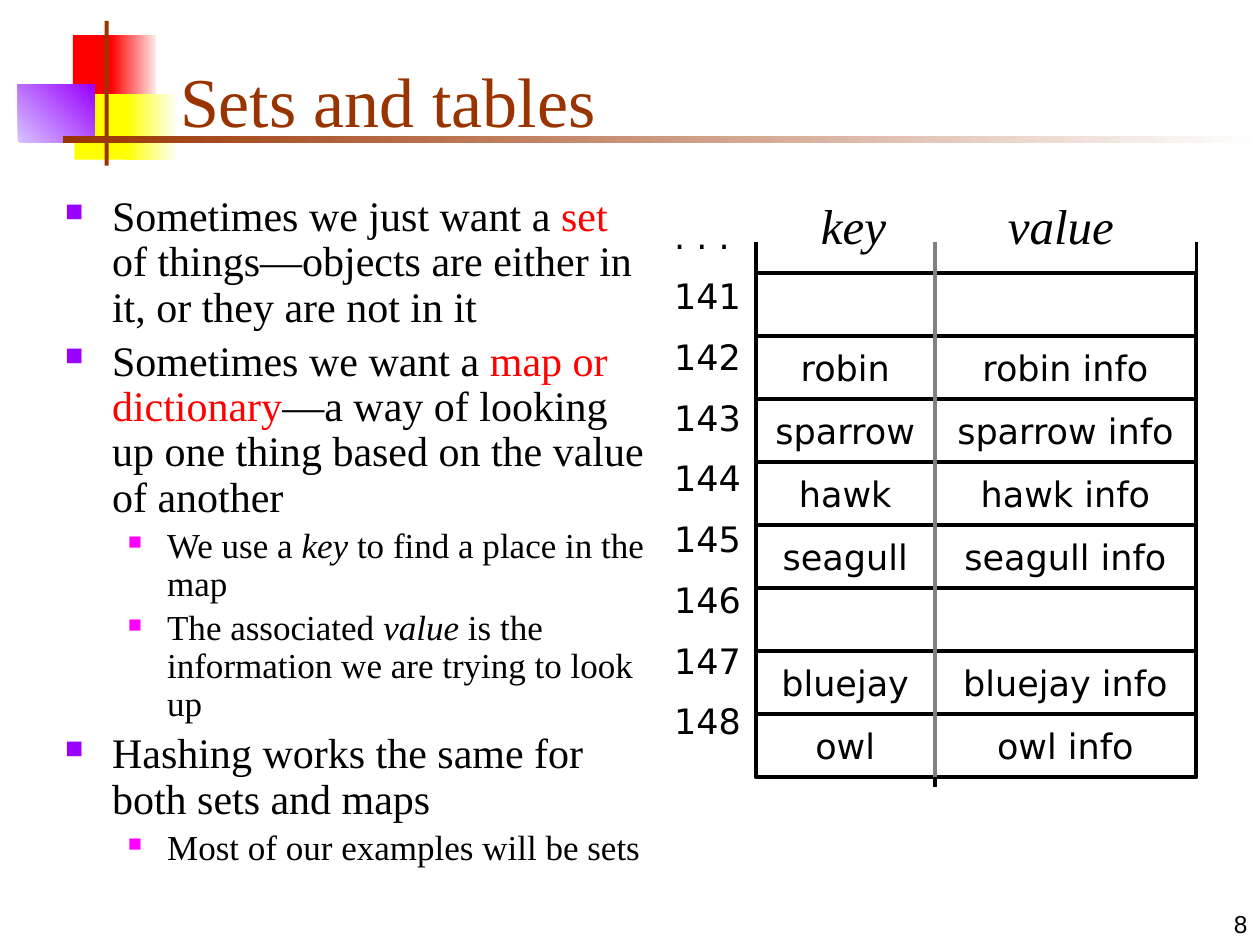
"""Build the slide on sets and tables."""
import pptx
import pptx.dml.color
import pptx.enum.shapes
import pptx.enum.text
import pptx.oxml.ns
import pptx.util
from lxml import etree

Cm = pptx.util.Cm
Pt = pptx.util.Pt
KIND = pptx.enum.shapes.MSO_SHAPE
ALIGN = pptx.enum.text.PP_ALIGN
ANCHOR = pptx.enum.text.MSO_ANCHOR
SERIF, SANS = "Times New Roman", "DejaVu Sans"
HUES = {
    "black": "000000", "white": "FFFFFF", "gray": "808080", "red": "FF0000",
    "rose": "FFEAEA", "yellow": "FFFF00", "cream": "FFFFF8", "lilac": "D8C4FF",
    "purple": "9900FF", "pink": "FF00FF", "brown": "993300",
}
BLOCKS = [
    (1.47, 0.71, 0.89, 1.32, ["red"], 0),
    (2.24, 0.71, 0.91, 1.32, ["red", "rose"], 0),
    (1.5, 1.9, 1.17, 1.32, ["yellow"], 0),
    (2.54, 1.9, 1.02, 1.32, ["yellow", "cream"], 0),
    (0.36, 1.7, 1.55, 1.17, ["lilac", "purple"], 45),
    (2.11, 0.42, 0.08, 2.92, ["brown"], 0),
    (1.27, 2.74, 24.13, 0.14, ["brown", "white"], 0),
]
POINTS = [
    (0, [("Sometimes we just want a ", ""), ("set", "red"),
         (" of things—objects are either in it, or they are not in it", "")]),
    (0, [("Sometimes we want a ", ""), ("map or dictionary", "red"),
         ("—a way of looking up one thing based on the value of another", "")]),
    (1, [("We use a ", ""), ("key", "italic"), (" to find a place in the map", "")]),
    (1, [("The associated ", ""), ("value", "italic"),
         (" is the information we are trying to look up", "")]),
    (0, [("Hashing works the same for both sets and maps", "")]),
    (1, [("Most of our examples will be sets", "")]),
]
LEVELS = [
    {"size": 24, "left": 0.95, "hang": 0.95, "gap": 4.9, "hue": "purple", "scale": 60},
    {"size": 20, "left": 2.06, "hang": 0.79, "gap": 4, "hue": "pink", "scale": 55},
]
BIRDS = ["", "robin", "sparrow", "hawk", "seagull", "", "bluejay", "owl"]
LEFT, SPLIT, RIGHT = 15.24, 18.84, 24.12
TOP, ROW, RISE = 5.51, 1.27, 4.88


def color(name):
    """Return the named colour."""
    return pptx.dml.color.RGBColor.from_string(HUES[name])


def add_run(para, text, size, font=SERIF, hue="black", italic=False):
    """Add one styled run to a paragraph."""
    run = para.add_run()
    run.text = text
    run.font.size, run.font.name, run.font.italic = Pt(size), font, italic
    run.font.color.rgb = color(hue)


def add_box(slide, x, y, w, h, anchor=ANCHOR.TOP):
    """Add a wrapping text box and return its frame."""
    frame = slide.shapes.add_textbox(Cm(x), Cm(y), Cm(w), Cm(h)).text_frame
    frame.word_wrap, frame.vertical_anchor = True, anchor
    return frame


def add_block(slide, x, y, w, h, hues, angle):
    """Add a borderless block with a plain or graded fill."""
    block = slide.shapes.add_shape(KIND.RECTANGLE, Cm(x), Cm(y), Cm(w), Cm(h))
    block.shadow.inherit = False
    block.line.fill.background()
    if len(hues) == 1:
        block.fill.solid()
        block.fill.fore_color.rgb = color(hues[0])
        return
    block.fill.gradient()
    block.fill.gradient_angle = angle
    for stop, hue, place in zip(block.fill.gradient_stops, hues, (0, 1)):
        stop.color.rgb, stop.position = color(hue), place


def add_cell(slide, x, y, w, text):
    """Add one outlined cell with centred text."""
    cell = slide.shapes.add_shape(KIND.FLOWCHART_PROCESS, Cm(x), Cm(y), Cm(w), Cm(ROW))
    cell.shadow.inherit = False
    cell.fill.background()
    cell.line.color.rgb, cell.line.width = color("black"), Pt(2.25)
    if text:
        frame = cell.text_frame
        frame.word_wrap, frame.vertical_anchor = False, ANCHOR.MIDDLE
        frame.paragraphs[0].alignment = ALIGN.CENTER
        add_run(frame.paragraphs[0], text, 20, SANS)


def add_line(slide, x, low, high, hue="black"):
    """Add an upright line."""
    line = slide.shapes.add_connector(
        pptx.enum.shapes.MSO_CONNECTOR.STRAIGHT, Cm(x), Cm(low), Cm(x), Cm(high))
    line.line.color.rgb, line.line.width = color(hue), Pt(2.25)
    etree.SubElement(line._element.spPr, pptx.oxml.ns.qn("a:effectLst"))


def add_mark(para, level):
    """Give a paragraph its indent and square bullet."""
    qn = pptx.oxml.ns.qn
    props = para._p.get_or_add_pPr()
    props.set("marL", str(Cm(level["left"])))
    props.set("indent", str(-Cm(level["hang"])))
    hue = etree.SubElement(props, qn("a:buClr"))
    etree.SubElement(hue, qn("a:srgbClr"), val=HUES[level["hue"]])
    etree.SubElement(props, qn("a:buSzPct"), val=str(level["scale"] * 1000))
    etree.SubElement(props, qn("a:buChar"), char="■")


def add_points(slide):
    """Add the bulleted text."""
    frame = add_box(slide, 1.06, 3.81, 12.28, 13.97)
    for index, (depth, parts) in enumerate(POINTS):
        para = frame.add_paragraph() if index else frame.paragraphs[0]
        level = LEVELS[depth]
        para.level, para.line_spacing = depth, 0.9
        para.space_before = Pt(level["gap"])
        add_mark(para, level)
        for text, style in parts:
            hue = "red" if style == "red" else "black"
            add_run(para, text, level["size"], SERIF, hue, style == "italic")


def add_labels(slide):
    """Add the row numbers beside the grid."""
    frame = add_box(slide, 13.34, 4.19, 1.9, 12.75)
    for index, text in enumerate([". . .", *map(str, range(141, 149))]):
        para = frame.add_paragraph() if index else frame.paragraphs[0]
        para.space_before = Pt(10.7)
        add_run(para, text, 20, SANS)


def add_grid(slide):
    """Add the key and value columns with their headings."""
    base = TOP + ROW * len(BIRDS)
    for x, end, tail in ((LEFT, SPLIT, ""), (SPLIT, RIGHT, " info")):
        for index, bird in enumerate(BIRDS):
            add_cell(slide, x, TOP + index * ROW, end - x, bird and bird + tail)
    add_line(slide, LEFT, base, RISE)
    add_line(slide, SPLIT, base + 0.2, RISE + 0.2)
    add_line(slide, SPLIT, base, RISE, "gray")
    add_line(slide, RIGHT, base, RISE)
    for x, text in ((16.3, "key"), (20.07, "value")):
        frame = add_box(slide, x, 3.81, 3.5, 1.45)
        add_run(frame.paragraphs[0], text, 28, italic=True)


def main():
    """Build and save the slide."""
    deck = pptx.Presentation()
    deck.slide_width, deck.slide_height = Cm(25.4), Cm(19.05)
    slide = deck.slides.add_slide(deck.slide_layouts[6])
    for block in BLOCKS:
        add_block(slide, *block)
    page = add_box(slide, 20.12, 17.78, 5.28, 1.27, ANCHOR.BOTTOM).paragraphs[0]
    page.alignment = ALIGN.RIGHT
    add_run(page, "8", 14, "Arial")
    title = add_box(slide, 3.38, 0.64, 21.64, 2.34, ANCHOR.BOTTOM)
    add_run(title.paragraphs[0], "Sets and tables", 40, hue="brown")
    add_points(slide)
    add_labels(slide)
    add_grid(slide)
    deck.save("out.pptx")


if __name__ == "__main__":
    main()
